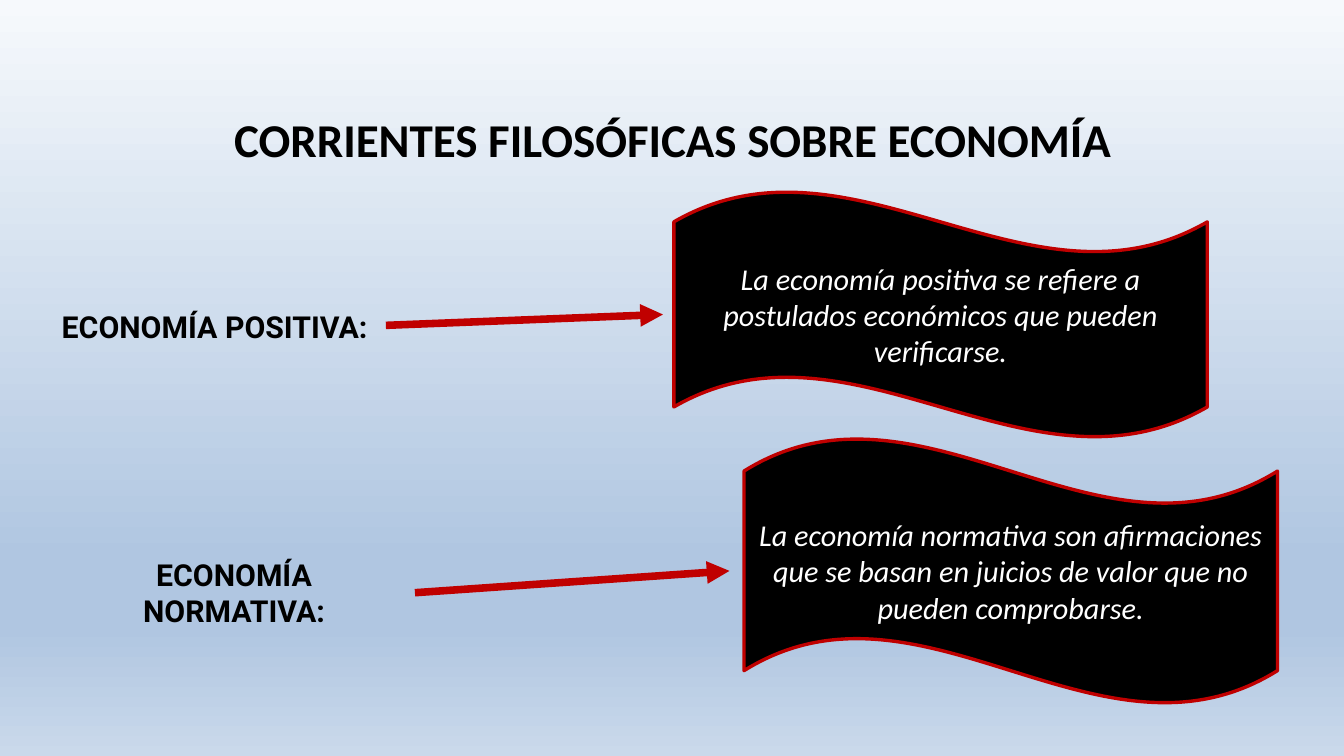
from dataclasses import dataclass

from lxml import etree
from pptx import Presentation
from pptx.dml.color import RGBColor
from pptx.enum.shapes import MSO_CONNECTOR, MSO_SHAPE
from pptx.enum.text import MSO_ANCHOR, PP_ALIGN
from pptx.oxml.ns import qn
from pptx.shapes.base import BaseShape
from pptx.slide import Slide
from pptx.util import Inches, Pt

WAVE = MSO_SHAPE.WAVE
STRAIGHT = MSO_CONNECTOR.STRAIGHT
MIDDLE = MSO_ANCHOR.MIDDLE
CENTER = PP_ALIGN.CENTER

COLORS = {"black": "000000", "white": "FFFFFF", "red": "C00000"}
BACKGROUND_STOPS = {0: "F6F9FC", 74: "B0C6E1", 83: "B0C6E1", 100: "CAD9EB"}
TITLE_FORMAT = {"name": "Calibri", "size": Pt(28), "bold": True}
LABEL_FORMAT = {"name": "Roboto", "size": Pt(18), "bold": True}
DEFINITION_FORMAT = {"name": "Calibri", "size": Pt(18), "italic": True}

Box = tuple[float, float, float, float]
Point = tuple[float, float]


@dataclass
class Current:
    label: str
    label_box: Box
    definition: str
    wave_box: Box
    arrow_start: Point
    arrow_end: Point


CURRENTS = [
    Current(
        "ECONOMÍA POSITIVA:",
        (0.36, 2.42, 2.83, 0.55),
        "La economía positiva se refiere a postulados económicos que pueden verificarse.",
        (5.57, 1.58, 4.41, 2.04),
        (3.19, 2.69),
        (5.48, 2.6),
    ),
    Current(
        "ECONOMÍA NORMATIVA:",
        (0.44, 4.62, 2.99, 0.55),
        "La economía normativa son afirmaciones que se basan en juicios de valor "
        "que no pueden comprobarse.",
        (6.15, 3.62, 4.41, 2.2),
        (3.43, 4.9),
        (6.03, 4.72),
    ),
]


def color(name: str) -> RGBColor:
    return RGBColor.from_string(COLORS[name])


def paint_background(slide: Slide) -> None:
    fill = slide.background.fill
    fill.gradient()
    fill.gradient_angle = 270
    stops = slide.element.find(f".//{qn('a:gsLst')}")
    for stop in list(stops):
        stops.remove(stop)
    for percent, value in BACKGROUND_STOPS.items():
        stop = etree.SubElement(stops, qn("a:gs"), pos=str(percent * 1000))
        etree.SubElement(stop, qn("a:srgbClr"), val=value)


def write_text(shape: BaseShape, text: str, text_format: dict, color_name: str) -> None:
    frame = shape.text_frame
    frame.word_wrap = True
    frame.vertical_anchor = MIDDLE
    paragraph = frame.paragraphs[0]
    paragraph.alignment = CENTER
    run = paragraph.add_run()
    run.text = text
    for attribute, value in text_format.items():
        setattr(run.font, attribute, value)
    run.font.color.rgb = color(color_name)


def add_label(slide: Slide, box: Box, text: str, text_format: dict) -> None:
    shape = slide.shapes.add_textbox(*map(Inches, box))
    write_text(shape, text, text_format, "black")


def add_wave(slide: Slide, box: Box, text: str) -> None:
    shape = slide.shapes.add_shape(WAVE, *map(Inches, box))
    shape.shadow.inherit = False
    shape.fill.solid()
    shape.fill.fore_color.rgb = color("black")
    shape.line.color.rgb = color("red")
    shape.line.width = Pt(2)
    write_text(shape, text, DEFINITION_FORMAT, "white")


def add_arrow(slide: Slide, start: Point, end: Point) -> None:
    connector = slide.shapes.add_connector(STRAIGHT, *map(Inches, start + end))
    connector.line.color.rgb = color("red")
    connector.line.width = Pt(4.5)
    properties = connector.element.spPr
    etree.SubElement(properties.find(qn("a:ln")), qn("a:tailEnd"), type="triangle")
    etree.SubElement(properties, qn("a:effectLst"))


def main() -> None:
    presentation = Presentation()
    presentation.slide_width = Inches(11.11)
    presentation.slide_height = Inches(6.25)
    slide = presentation.slides.add_slide(presentation.slide_layouts[6])
    paint_background(slide)
    add_label(slide, (0.56, 0.84, 10, 0.61), "CORRIENTES FILOSÓFICAS SOBRE ECONOMÍA", TITLE_FORMAT)
    for current in CURRENTS:
        add_label(slide, current.label_box, current.label, LABEL_FORMAT)
        add_wave(slide, current.wave_box, current.definition)
        add_arrow(slide, current.arrow_start, current.arrow_end)
    presentation.save("out.pptx")


if __name__ == "__main__":
    main()
